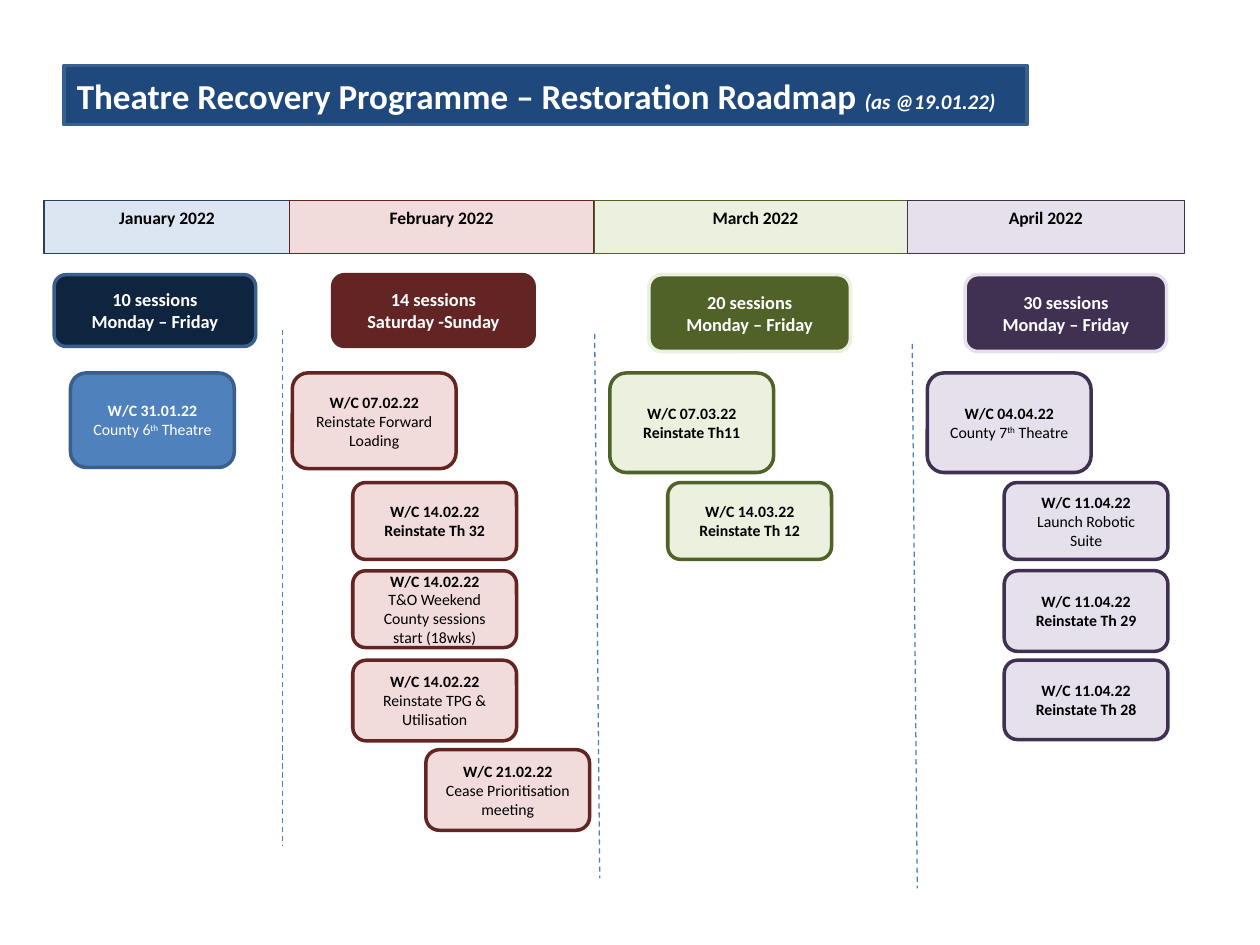
from dataclasses import dataclass

from lxml import etree
from pptx import Presentation
from pptx.dml.color import RGBColor
from pptx.enum.dml import MSO_LINE
from pptx.enum.shapes import MSO_CONNECTOR, MSO_SHAPE
from pptx.enum.text import MSO_ANCHOR, MSO_AUTO_SIZE, PP_ALIGN
from pptx.oxml.ns import qn
from pptx.util import Inches, Pt


@dataclass(frozen=True)
class Theme:
    font: str = "Calibri"
    white: str = "FFFFFF"
    black: str = "000000"
    navy: str = "1F497D"
    edge: str = "3A5F8C"
    rule: str = "4B7EBC"
    title: float = 20
    note: float = 12
    month: float = 10
    count: float = 10.5
    card: float = 9
    thin: float = 0.75
    thick: float = 2


@dataclass(frozen=True)
class Tone:
    """Colours of one month: header, session badge and cards."""
    pale: str
    dark: str
    badge: str
    trim: str
    card: str
    edge: str
    ink: str = Theme.black


BLUE = Tone("DCE6F2", "254061", "0F243E", Theme.edge, "4F81BD", Theme.edge, Theme.white)
RED = Tone("F2DCDB", "632523", "632523", "632523", "F2DCDB", "632523")
GREEN = Tone("EBF1DE", "4F6228", "4F6228", "EBF1DE", "EBF1DE", "4F6228")
PLUM = Tone("E6E0EC", "403152", "403152", "E6E0EC", "E6E0EC", "403152")

# Boxes are (column, row, width, height) on a grid of 100 columns by 75 rows.
# A card body is a tuple of parts, every second one raised.
# Month: name, tone, header column and width, badge column and height, count, days
MONTHS = [
    ("January 2022", BLUE, 3.5, 19.5, 4.3, 5.7, "10 sessions", "Monday – Friday"),
    ("February 2022", RED, 23, 24.1, 26.4, 5.7, "14 sessions", "Saturday -Sunday"),
    ("March 2022", GREEN, 47.2, 25.5, 51.5, 6.1, "20 sessions", "Monday – Friday"),
    ("April 2022", PLUM, 72, 22, 76.6, 6.1, "30 sessions", "Monday – Friday"),
]
# Card: tone, column, level, height, week, body, bold body
CARDS = [
    (BLUE, 5.6, 0, 7.5, "31.01.22", ("County 6", "th", " Theatre"), False),
    (RED, 23.2, 0, 7.6, "07.02.22", ("Reinstate Forward Loading",), False),
    (RED, 28, 1, 6.1, "14.02.22", ("Reinstate Th 32",), True),
    (RED, 28, 2, 6.1, "14.02.22", ("T&O Weekend County sessions start (18wks)",), False),
    (RED, 28, 3, 6.4, "14.02.22", ("Reinstate TPG & Utilisation",), False),
    (RED, 33.8, 4, 6.4, "21.02.22", ("Cease Prioritisation meeting",), False),
    (GREEN, 48.4, 0, 7.9, "07.03.22", ("Reinstate Th11",), True),
    (GREEN, 53, 1, 6.1, "14.03.22", ("Reinstate Th 12",), True),
    (PLUM, 73.6, 0, 7.9, "04.04.22", ("County 7", "th", " Theatre"), False),
    (PLUM, 79.7, 1, 6.1, "11.04.22", ("Launch Robotic Suite",), False),
    (PLUM, 79.7, 2, 6.4, "11.04.22", ("Reinstate Th 29",), True),
    (PLUM, 79.7, 3, 6.3, "11.04.22", ("Reinstate Th 28",), True),
]
LEVELS = (29.6, 38.3, 45.3, 52.4, 59.5)
# Divider: start column, start row, end column, end row
RULES = [
    (22.4, 26.2, 22.4, 67.1),
    (47.2, 26.5, 47.6, 69.7),
    (72.4, 27.3, 72.8, 70.5),
]


class Board:
    def __init__(self, deck, theme):
        self.theme = theme
        self.slide = deck.slides.add_slide(deck.slide_layouts[5])
        self.wide = deck.slide_width / 100
        self.high = deck.slide_height / 75

    def place(self, col, row, wide, high):
        """Turn grid units into slide lengths."""
        return (round(col * self.wide), round(row * self.high),
                round(wide * self.wide), round(high * self.high))

    def paint(self, shape, fill, line, width):
        shape.fill.solid()
        shape.fill.fore_color.rgb = RGBColor.from_string(fill)
        shape.line.color.rgb = RGBColor.from_string(line)
        shape.line.width = Pt(width)

    def style(self, run, size, ink, bold=True):
        font = run.font
        font.name, font.size, font.bold = self.theme.font, Pt(size), bold
        font.color.rgb = RGBColor.from_string(ink)

    def title(self, box, text, note):
        look, shape = self.theme, self.slide.shapes.title
        shape.left, shape.top, shape.width, shape.height = self.place(*box)
        geom = etree.SubElement(shape.element.spPr, qn("a:prstGeom"), prst="roundRect")
        etree.SubElement(geom, qn("a:avLst"))
        self.paint(shape, look.navy, look.edge, look.thick)
        frame = shape.text_frame
        frame.text = text
        frame.word_wrap = True
        frame.auto_size = MSO_AUTO_SIZE.NONE
        frame.vertical_anchor = MSO_ANCHOR.MIDDLE
        line = frame.paragraphs[0]
        line.alignment = PP_ALIGN.LEFT
        self.style(line.runs[0], look.title, look.white)
        tail = line.add_run()
        tail.text = note
        self.style(tail, look.note, look.white)
        tail.font.italic = True

    def box(self, kind, box, fill, line, width, lines, size, ink):
        """Draw a shape with centred lines, each a (parts, bold) pair."""
        shape = self.slide.shapes.add_shape(kind, *self.place(*box))
        shape.shadow.inherit = False
        self.paint(shape, fill, line, width)
        frame = shape.text_frame
        frame.word_wrap = True
        frame.vertical_anchor = MSO_ANCHOR.MIDDLE
        for spot, (parts, bold) in enumerate(lines):
            para = frame.add_paragraph() if spot else frame.paragraphs[0]
            para.alignment = PP_ALIGN.CENTER
            for turn, part in enumerate(parts):
                run = para.add_run()
                run.text = part
                self.style(run, size, ink, bold)
                if turn % 2:
                    run._r.get_or_add_rPr().set("baseline", "30000")
        return shape

    def month(self, name, tone, col, wide):
        look = self.theme
        shape = self.box(MSO_SHAPE.RECTANGLE, (col, 15.9, wide, 4.2), tone.pale,
                         tone.dark, look.thin, [((name,), True)], look.month, look.black)
        shape.text_frame.vertical_anchor = MSO_ANCHOR.TOP

    def badge(self, tone, col, high, *lines):
        look = self.theme
        self.box(MSO_SHAPE.ROUNDED_RECTANGLE, (col, 21.8, 16, high), tone.badge,
                 tone.trim, look.thick, [((text,), True) for text in lines],
                 look.count, look.white)

    def card(self, tone, col, level, high, week, body, bold):
        look = self.theme
        self.box(MSO_SHAPE.ROUNDED_RECTANGLE, (col, LEVELS[level], 13, high), tone.card,
                 tone.edge, look.thick, [(("W/C " + week,), True), (body, bold)],
                 look.card, tone.ink)

    def rule(self, *ends):
        link = self.slide.shapes.add_connector(MSO_CONNECTOR.STRAIGHT, *self.place(*ends))
        link.line.color.rgb = RGBColor.from_string(self.theme.rule)
        link.line.width = Pt(self.theme.thin)
        link.line.dash_style = MSO_LINE.DASH
        etree.SubElement(link.element.spPr, qn("a:effectLst"))


def main():
    deck = Presentation()
    deck.slide_width, deck.slide_height = Inches(10), Inches(7.5)
    board = Board(deck, Theme())
    board.title((5.1, 5.2, 76.4, 4.7),
                "Theatre Recovery Programme – Restoration Roadmap ", "(as @19.01.22)")
    for name, tone, col, wide, left, high, count, days in MONTHS:
        board.month(name, tone, col, wide)
        board.badge(tone, left, high, count, days)
    for ends in RULES:
        board.rule(*ends)
    for card in CARDS:
        board.card(*card)
    deck.save("out.pptx")


if __name__ == "__main__":
    main()
